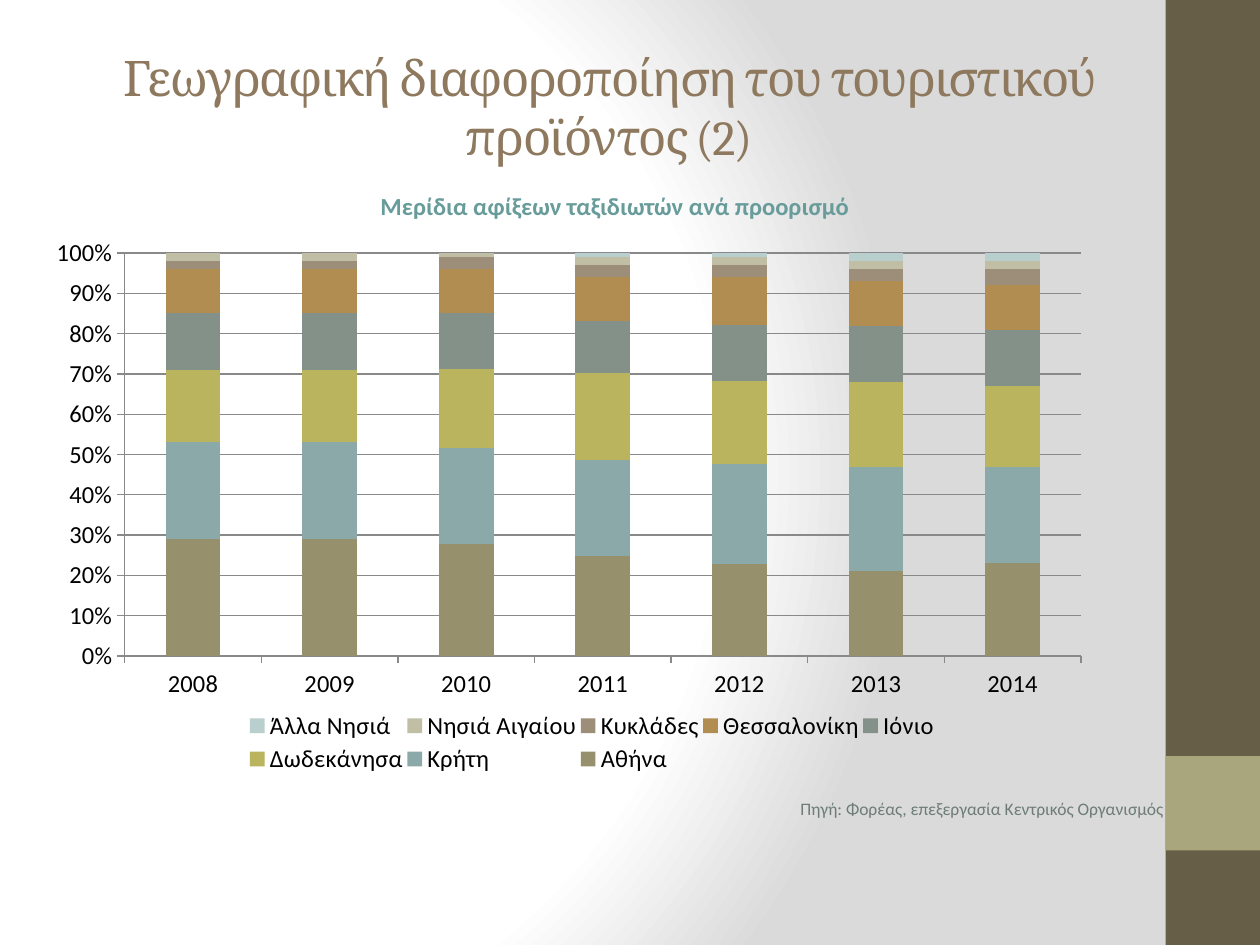
from pptx import Presentation
from pptx.chart.data import CategoryChartData
from pptx.dml.color import RGBColor
from pptx.enum.chart import XL_CHART_TYPE, XL_LEGEND_POSITION, XL_TICK_MARK
from pptx.enum.shapes import MSO_SHAPE
from pptx.enum.text import MSO_ANCHOR, PP_ALIGN
from pptx.oxml import parse_xml
from pptx.oxml.ns import nsdecls
from pptx.util import Inches, Pt

THEME = {
    "heading_font": "Cambria", "body_font": "Calibri",
    "title_size": 28, "body_size": 14, "source_size": 10,
    "title": "8E795E", "subtitle": "689C9A", "source": "6D7D76",
    "band": "675E47", "accent": "A9A57C", "text": "000000", "line": "898989",
    "light": "FFFFFF", "shade": "DADADA",
}
WIDTH, HEIGHT = 10, 7.5
BAND_LEFT = 0.925 * WIDTH
BAND_WIDTH = WIDTH - BAND_LEFT
BODY_LEFT, BODY_WIDTH = 0.43, 8.9

deck = Presentation()
deck.slide_width, deck.slide_height = Inches(WIDTH), Inches(HEIGHT)
page = deck.slides.add_slide(deck.slide_layouts[6])


def add_text(text, area, font, size, color, align, bold=False):
    box = page.shapes.add_textbox(*map(Inches, area))
    frame = box.text_frame
    frame.word_wrap = True
    frame.vertical_anchor = MSO_ANCHOR.MIDDLE
    para = frame.paragraphs[0]
    para.alignment = align
    span = para.add_run()
    span.text = text
    span.font.name, span.font.size, span.font.bold = font, Pt(size), bold
    span.font.color.rgb = RGBColor.from_string(color)
    return span


def add_layout(part, target, left, top, width, height):
    """Place a chart part by shares of the chart's size."""
    inner = '<c:layoutTarget val="inner"/>' if target == "inner" else ""
    layout = parse_xml(
        f'<c:layout {nsdecls("c")}><c:manualLayout>{inner}'
        '<c:xMode val="edge"/><c:yMode val="edge"/>'
        f'<c:x val="{left}"/><c:y val="{top}"/><c:w val="{width}"/><c:h val="{height}"/>'
        '</c:manualLayout></c:layout>')
    for old in part.xpath("c:layout"):
        part.remove(old)
    if target == "inner":
        part.insert(0, layout)
    else:
        part.xpath("c:legendPos")[0].addnext(layout)


# Background: radial gradient
stops = "".join(
    f'<a:gs pos="{share * 1000}"><a:srgbClr val="{THEME[name]}"/></a:gs>'
    for share, name in ((0, "light"), (75, "light"), (100, "shade")))
page.element.cSld.insert(0, parse_xml(
    f'<p:bg {nsdecls("p", "a")}><p:bgPr><a:gradFill rotWithShape="1"><a:gsLst>{stops}</a:gsLst>'
    '<a:path path="circle"><a:fillToRect l="20000" t="50000" r="100000" b="50000"/></a:path>'
    '</a:gradFill><a:effectLst/></p:bgPr></p:bg>'))

# Side band and its accent square
for top, height, name in ((0, HEIGHT, "band"), (0.8 * HEIGHT, BAND_WIDTH, "accent")):
    block = page.shapes.add_shape(
        MSO_SHAPE.RECTANGLE, *map(Inches, (BAND_LEFT, top, BAND_WIDTH, height)))
    block.shadow.inherit = False
    block.fill.solid()
    block.fill.fore_color.rgb = RGBColor.from_string(THEME[name])
    block.line.fill.background()

# Title, subtitle and source
title = add_text("Γεωγραφική διαφοροποίηση του τουριστικού προϊόντος (2)",
                 (0.5, 0.3, 8.67, 1.09), THEME["heading_font"], THEME["title_size"],
                 THEME["title"], PP_ALIGN.CENTER)
title.font._element.set("spc", "-100")
add_text("Μερίδια αφίξεων ταξιδιωτών ανά προορισμό",
         (BODY_LEFT, 1.46, BODY_WIDTH, 0.34), THEME["body_font"], THEME["body_size"],
         THEME["subtitle"], PP_ALIGN.CENTER, True)
add_text("Πηγή: Φορέας, επεξεργασία Κεντρικός Οργανισμός",
         (BODY_LEFT, 6.28, BODY_WIDTH, 0.27), THEME["body_font"], THEME["source_size"],
         THEME["source"], PP_ALIGN.RIGHT)

# Chart of arrival shares
regions = [
    ("Αθήνα", (29, 29, 28, 25, 23, 21, 23), "96916C"),
    ("Κρήτη", (24, 24, 24, 24, 25, 26, 24), "8BA9A8"),
    ("Δωδεκάνησα", (18, 18, 20, 22, 21, 21, 20), "BAB45F"),
    ("Ιόνιο", (14, 14, 14, 13, 14, 14, 14), "849189"),
    ("Θεσσαλονίκη", (11, 11, 11, 11, 12, 11, 11), "B18D51"),
    ("Κυκλάδες", (2, 2, 3, 3, 3, 3, 4), "9D8E79"),
    ("Νησιά Αιγαίου", (2, 2, 1, 2, 2, 2, 2), "C1BEA6"),
    ("Άλλα Νησιά", (None, None, None, 1, 1, 2, 2), "B9CFCE"),
]
data = CategoryChartData()
data.categories = [str(year) for year in range(2008, 2015)]
for name, values, _ in regions:
    data.add_series(name, values)
chart = page.shapes.add_chart(
    XL_CHART_TYPE.COLUMN_STACKED_100, *map(Inches, (0.45, 1.78, 8.74, 4.57)), data).chart
chart.has_title = False
chart.font.name, chart.font.size = THEME["body_font"], Pt(THEME["body_size"])
chart.font.color.rgb = RGBColor.from_string(THEME["text"])

plot = chart.plots[0]
plot.gap_width, plot.overlap, plot.vary_by_categories = 150, 100, False
for series, (_, _, color) in zip(plot.series, regions):
    series.format.fill.solid()
    series.format.fill.fore_color.rgb = RGBColor.from_string(color)

# Axes and gridlines
shares = chart.value_axis
shares.has_major_gridlines = True
shares.minimum_scale, shares.maximum_scale, shares.major_unit = 0, 1, 0.1
shares.tick_labels.number_format = "0%"
shares.tick_labels.number_format_is_linked = False
for axis in (shares, chart.category_axis):
    axis.major_tick_mark = XL_TICK_MARK.OUTSIDE
for part in (shares, chart.category_axis, shares.major_gridlines):
    part.format.line.width = Pt(0.75)
    part.format.line.color.rgb = RGBColor.from_string(THEME["line"])

# Legend below the columns
chart.has_legend = True
chart.legend.position = XL_LEGEND_POSITION.RIGHT
chart.legend.include_in_layout = False
add_layout(chart.legend._element, "outer", 0.17, 0.84, 0.63, 0.12)
add_layout(plot._element.getparent(), "inner", 0.06, 0.05, 0.87, 0.7)

deck.save("out.pptx")
